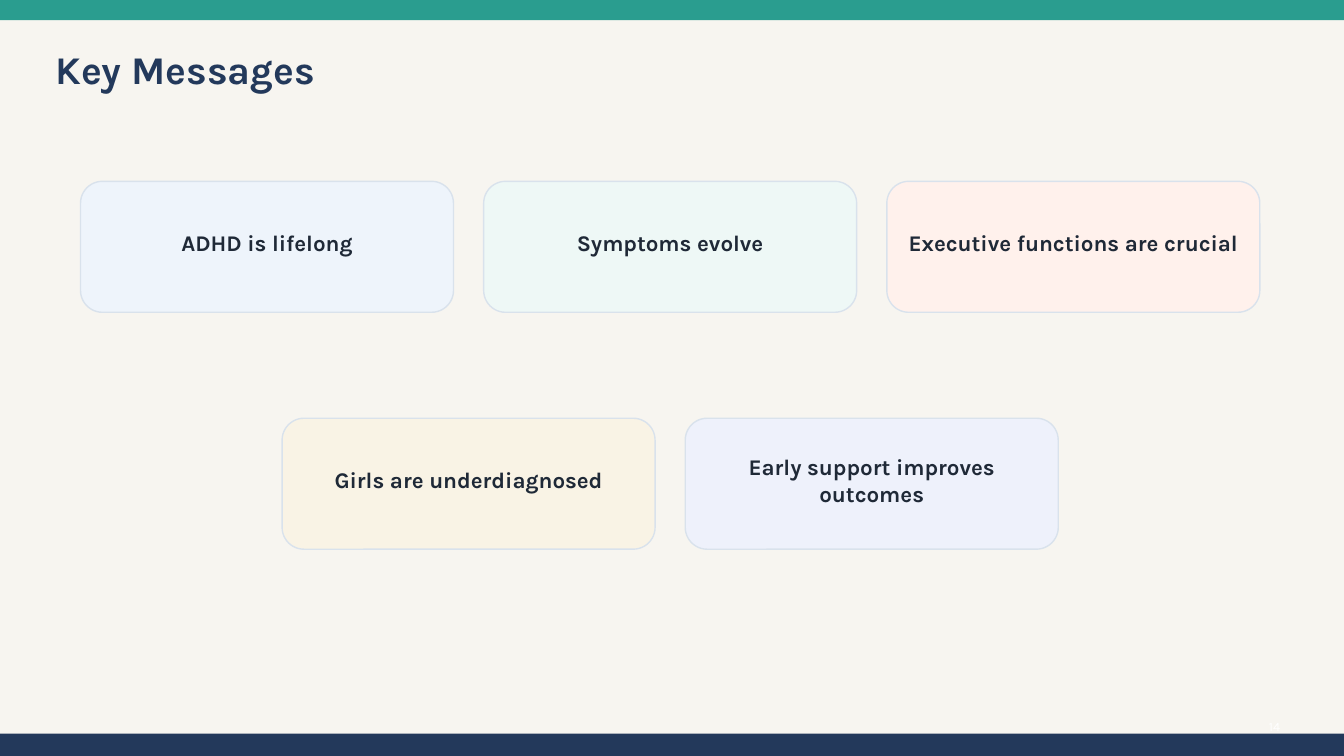
"""Build the Key Messages slide."""
from pptx import Presentation
from pptx.dml.color import RGBColor
from pptx.enum import shapes, text
from pptx.util import Cm, Pt

TITLE = "Key Messages"
NUMBER = "14"
ROWS = [
    (4.57, [("ADHD is lifelong", "EEF4FB"),
            ("Symptoms evolve", "EEF8F6"),
            ("Executive functions are crucial", "FFF1EC")]),
    (10.54, [("Girls are underdiagnosed", "F9F3E5"),
             ("Early support improves outcomes", "EEF1FB")]),
]


class Theme:
    font = "Karla"
    page, teal, navy = "F7F5F0", "2A9D8F", "23395B"
    edge, ink, white = "D9E2EC", "1F2937", "FFFFFF"
    head, body, small = 28, 16, 9


WIDE, HIGH = 33.87, 19.05
CARD_W, CARD_H, GAP = 9.4, 3.3, 0.76
MIDDLE = 16.89
SHAPE = shapes.MSO_SHAPE
ALIGN = text.PP_ALIGN


def paint(fill, color):
    """Make a fill solid."""
    fill.solid()
    fill.fore_color.rgb = RGBColor.from_string(color)


def box(slide, kind, place, color):
    """Add a filled shape without outline or shadow."""
    shape = slide.shapes.add_shape(kind, *map(Cm, place))
    shape.shadow.inherit = False
    paint(shape.fill, color)
    shape.line.fill.background()
    return shape


def write(shape, words, size, color, align, bold=True, pad=(0, 0)):
    """Put one styled run into a shape."""
    frame = shape.text_frame
    frame.word_wrap = True
    frame.auto_size = text.MSO_AUTO_SIZE.NONE
    frame.vertical_anchor = text.MSO_ANCHOR.MIDDLE
    side, base = map(Cm, pad)
    frame.margin_left = frame.margin_right = side
    frame.margin_top, frame.margin_bottom = 0, base
    para = frame.paragraphs[0]
    para.alignment = align
    run = para.add_run()
    run.text = words
    font = run.font
    font.name, font.size, font.bold = Theme.font, Pt(size), bold
    font.color.rgb = RGBColor.from_string(color)


def card(slide, left, top, words, color):
    """Add one message card."""
    shape = box(slide, SHAPE.ROUNDED_RECTANGLE, (left, top, CARD_W, CARD_H), color)
    paint(shape.line.fill, Theme.edge)
    shape.line.width = Pt(1)
    write(shape, words, Theme.body, Theme.ink, ALIGN.CENTER, pad=(0.3, 0.2))


def main():
    """Lay out and save the slide."""
    deck = Presentation()
    deck.slide_width, deck.slide_height = Cm(WIDE), Cm(HIGH)
    slide = deck.slides.add_slide(deck.slide_layouts[5])
    paint(slide.background.fill, Theme.page)

    for top, high, color in ((0, 0.51, Theme.teal), (18.49, 0.56, Theme.navy)):
        box(slide, SHAPE.RECTANGLE, (0, top, WIDE, high), color)

    title = slide.shapes.title
    title.left, title.top, title.width, title.height = map(Cm, (1.4, 0.97, 22.35, 1.52))
    write(title, TITLE, Theme.head, Theme.navy, ALIGN.LEFT)

    for top, cards in ROWS:
        start = MIDDLE - (len(cards) * (CARD_W + GAP) - GAP) / 2
        for i, (words, color) in enumerate(cards):
            card(slide, start + i * (CARD_W + GAP), top, words, color)

    number = slide.shapes.add_textbox(*map(Cm, (31.37, 18.08, 0.89, 0.46)))
    write(number, NUMBER, Theme.small, Theme.white, ALIGN.RIGHT, bold=False)
    deck.save("out.pptx")


if __name__ == "__main__":
    main()
